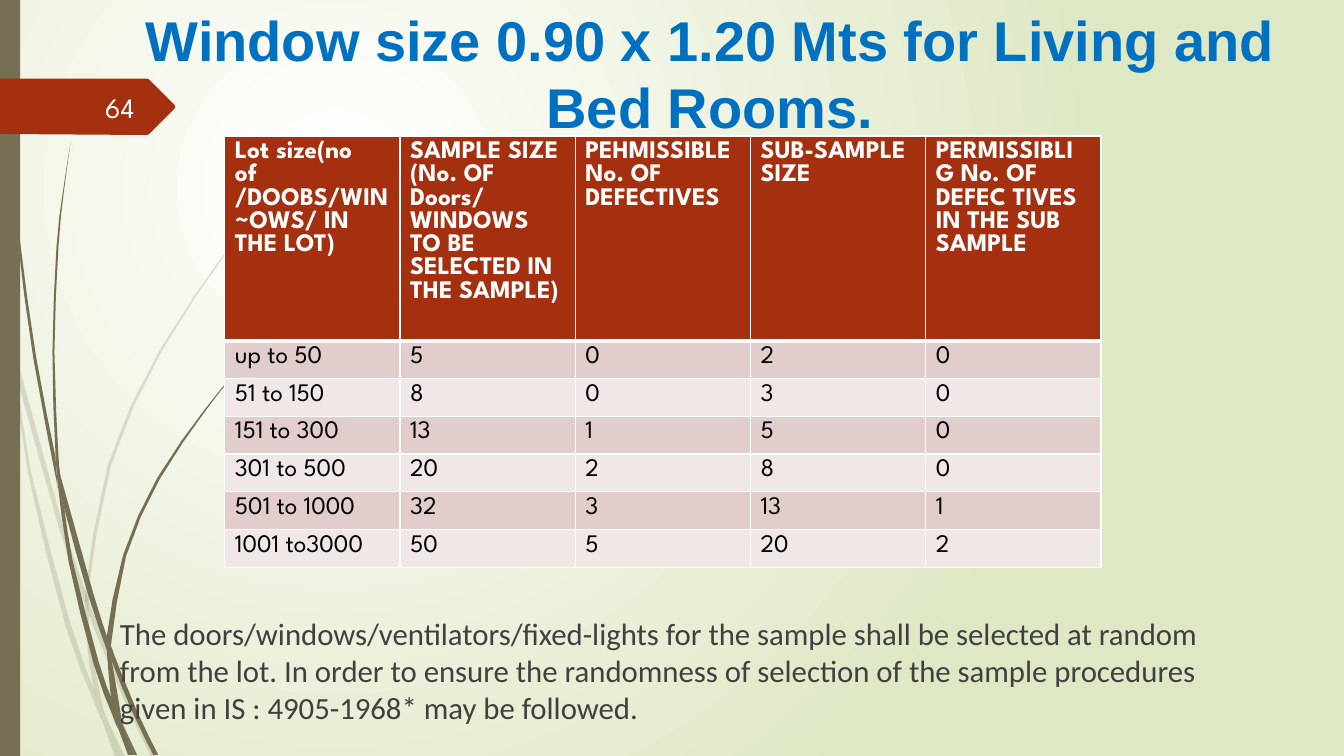
from lxml.etree import SubElement
from pptx import Presentation
from pptx.dml.color import RGBColor
from pptx.enum.shapes import MSO_SHAPE
from pptx.enum.text import MSO_ANCHOR, MSO_AUTO_SIZE, PP_ALIGN
from pptx.oxml import parse_xml
from pptx.oxml.ns import nsdecls, qn
from pptx.util import Inches, Pt

TITLE = "Window size 0.90 x 1.20 Mts for Living and Bed Rooms."
BODY = ("The doors/windows/ventilators/fixed-lights for the sample shall be selected at random "
        "from the lot. In order to ensure the randomness of selection of the sample procedures "
        "given in IS : 4905-1968* may be followed.")
PAGE = "64"
ROWS = [
    ("Lot size(no of /DOOBS/WIN~OWS/ IN THE LOT)",
     "SAMPLE SIZE (No. OF Doors/ WINDOWS TO BE SELECTED IN THE SAMPLE)",
     "PEHMISSIBLE No. OF DEFECTIVES", "SUB-SAMPLE SIZE",
     "PERMISSIBLIG No. OF DEFEC TIVES IN THE SUB SAMPLE"),
    ("up to 50", "5", "0", "2", "0"),
    ("51 to 150", "8", "0", "3", "0"),
    ("151 to 300", "13", "1", "5", "0"),
    ("301 to 500", "20", "2", "8", "0"),
    ("501 to 1000", "32", "3", "13", "1"),
    ("1001 to3000", "50", "5", "20", "2"),
]

# Each blade of grass: one edge, then the other edge running back (inches)
FAINT_BLADES = [
    ([(.11, 3.5), (.09, 3.22), (0, 2.82)], [(0, 2.99), (.1, 3.44), (.11, 3.5)]),
    ([(.84, 5.99), (.85, 5.86), (.62, 5.2), (.14, 3.45)],
     [(.17, 3.76), (.58, 5.22), (.84, 5.99)]),
    ([(.88, 5.96), (.88, 6.1), (1.23, 6.94), (1.5, 7.51)],
     [(1.55, 7.51), (1.27, 6.92), (.92, 6.07), (.88, 5.96)]),
    ([(1.19, 7.51), (1.24, 7.51)], [(1.05, 7.11), (1.19, 7.51)]),
    ([(.93, 6.83), (.7, 6.19), (.31, 4.69), (.17, 3.76), (.11, 3.5)],
     [(.11, 3.5), (.28, 4.7), (.65, 6.21), (.92, 6.93), (1.01, 7.14), (.99, 7.07), (.93, 6.83)]),
    ([(.84, 5.99), (.87, 6.46), (.93, 6.83), (.96, 6.92), (1.05, 7.11)],
     [(1.03, 7.06), (.91, 6.46), (.88, 6.1), (.84, 5.99)]),
    ([(.88, 5.84), (1.1, 4.62), (1.6, 3.49), (2.29, 2.45), (2.68, 1.98), (3.12, 1.54)],
     [(3.12, 1.53), (2.68, 1.97), (2.28, 2.44), (1.58, 3.48), (1.07, 4.61), (.85, 5.84),
      (.88, 5.96)]),
    ([(1.01, 7.14), (1.14, 7.51)], [(1.19, 7.51), (1.01, 7.14)]),
    ([(.88, 6.08), (.88, 5.96)], [(.85, 5.86), (.84, 5.99)]),
    ([(.96, 6.92), (.93, 6.83), (.99, 7.07), (1.01, 7.14), (1.19, 7.51)],
     [(1.19, 7.51), (1.05, 7.11), (.96, 6.92)]),
]
DARK_BLADES = [
    ([(.03, 0), (.04, .48), (.07, 1.1), (.17, 2.33), (.33, 3.55), (.56, 4.77), (.57, 4.81)],
     [(.55, 4.53), (.36, 3.55), (.19, 2.32), (.08, 1.09), (.05, .48), (.04, 0)]),
    ([(.6, 4.72), (.64, 5.05), (.88, 5.92), (1.06, 6.45)],
     [(1.06, 6.31), (.93, 5.9), (.6, 4.72)]),
    ([(1.13, 6.49), (1.1, 6.41), (1.11, 6.56), (1.32, 7.08), (1.52, 7.49)],
     [(1.57, 7.49), (1.36, 7.06), (1.13, 6.49)]),
    ([(1.1, 6.91), (.98, 6.57), (.72, 5.56), (.64, 5.05), (.57, 4.77)],
     [(.57, 4.77), (.68, 5.57), (.93, 6.59), (1.11, 7.08), (1.17, 7.22), (1.1, 6.91)]),
    ([(.6, 4.72), (.58, 4.53), (.54, 3.49), (.58, 2.45), (.63, 1.93), (.7, 1.41)],
     [(.7, 1.41), (.62, 1.93), (.56, 2.45), (.52, 3.49), (.55, 4.49), (.6, 4.72)]),
    ([(1.33, 7.49), (1.36, 7.49)], [(1.22, 7.19), (1.33, 7.49)]),
    ([(.57, 4.77), (.64, 5.05)], [(.6, 4.72), (.55, 4.49), (.57, 4.77)]),
    ([(1.11, 6.33), (1.25, 5.52), (1.58, 4.76), (2.05, 4.06), (2.31, 3.74), (2.61, 3.44)],
     [(2.6, 3.44), (2.31, 3.73), (2.04, 4.05), (1.56, 4.74), (1.22, 5.51), (1.06, 6.31),
      (1.1, 6.41)]),
    ([(1.17, 7.22), (1.27, 7.49)], [(1.31, 7.49), (1.17, 7.22)]),
    ([(1.06, 6.45), (1.1, 6.91), (1.16, 7.06), (1.22, 7.19)],
     [(1.21, 7.16), (1.11, 6.56), (1.06, 6.45)]),
    ([(1.06, 6.45), (1.11, 6.56)], [(1.1, 6.41), (1.06, 6.31)]),
    ([(1.16, 7.06), (1.1, 6.91), (1.17, 7.22), (1.3, 7.49)],
     [(1.33, 7.49), (1.22, 7.19), (1.16, 7.06)]),
]
BANNER = [(0, .78), (1.46, .78), (1.48, .79), (1.73, 1.04), (1.74, 1.06), (1.73, 1.08),
          (1.48, 1.33), (1.46, 1.34), (0, 1.33)]

OLIVE = RGBColor(0x76, 0x6F, 0x54)
RUST = RGBColor(0xA5, 0x30, 0x10)
BLUE = RGBColor(0x00, 0x70, 0xC0)
GREY = RGBColor(0x40, 0x40, 0x40)
BLACK = RGBColor(0x00, 0x00, 0x00)
WHITE = RGBColor(0xFF, 0xFF, 0xFF)
PAGE_WHITE = RGBColor(0xFE, 0xFF, 0xFF)
BANDS = [RGBColor(0xF0, 0xE8, 0xE7), RGBColor(0xE1, 0xCD, 0xCC)]
SPARTAN = "League Spartan"
TABLE_W, TABLE_H, HEAD_H = 8.69, 4.28, 2.03


def write(tf, text, font, size, color, bold=False, align=PP_ALIGN.LEFT):
    p = tf.paragraphs[0]
    p.alignment = align
    r = p.add_run()
    r.text = text
    r.font.name, r.font.size, r.font.bold = font, Pt(size), bold
    r.font.color.rgb = color
    return p


def place(sp, x, y, w, h):
    sp.left, sp.top, sp.width, sp.height = (Inches(v) for v in (x, y, w, h))


def paint(sp, color, alpha=None):
    sp.shadow.inherit = False
    sp.fill.solid()
    sp.fill.fore_color.rgb = color
    sp.line.fill.background()
    if alpha:
        srgb = sp.element.spPr.find(qn("a:solidFill")).find(qn("a:srgbClr"))
        SubElement(srgb, qn("a:alpha")).set("val", str(alpha * 1000))


def smooth(knots):
    """Knots with the midpoint of a Catmull-Rom curve added in each gap."""
    if len(knots) == 2:
        return knots
    ends = [knots[0], *knots, knots[-1]]
    curve = [knots[0]]
    for quad in zip(ends, ends[1:], ends[2:], ends[3:]):
        curve.append(tuple((9 * (b + c) - a - d) / 16 for a, b, c, d in zip(*quad)))
        curve.append(quad[2])
    return curve


def outline(s, points, color, alpha=None):
    pts = [(Inches(x), Inches(y)) for x, y in points]
    builder = s.shapes.build_freeform(*pts[0])
    builder.add_line_segments(pts[1:], close=True)
    paint(builder.convert_to_shape(), color, alpha)


def set_borders(cell, top, bottom):
    tcPr = cell._tc.get_or_add_tcPr()
    for i, (side, width) in enumerate((("L", 1), ("R", 1), ("T", top), ("B", bottom))):
        tcPr.insert(i, parse_xml(
            f'<a:ln{side} {nsdecls("a")} w="{Pt(width)}"><a:solidFill>'
            f'<a:srgbClr val="{WHITE}"/></a:solidFill></a:ln{side}>'))


def set_background(s):
    s.background.fill.gradient()
    grad = s.element.find(".//" + qn("a:gradFill"))
    grad.getparent().replace(grad, parse_xml(
        f'<a:gradFill {nsdecls("a")} rotWithShape="1"><a:gsLst>'
        '<a:gs pos="0"><a:srgbClr val="FFFFFF"/></a:gs>'
        '<a:gs pos="100000"><a:srgbClr val="DFE8C4"/></a:gs></a:gsLst>'
        '<a:path path="circle"><a:fillToRect l="50000" t="50000" r="100000" b="100000"/>'
        '</a:path></a:gradFill>'))


def add_lot_table(s):
    n_rows, n_cols = len(ROWS), len(ROWS[0])
    table = s.shapes.add_table(n_rows, n_cols, Inches(2.23), Inches(1.35),
                               Inches(TABLE_W), Inches(TABLE_H)).table
    for col in table.columns:
        col.width = Inches(TABLE_W / n_cols)
    for i, texts in enumerate(ROWS):
        head = i == 0
        table.rows[i].height = Inches(HEAD_H if head else (TABLE_H - HEAD_H) / (n_rows - 1))
        for j, text in enumerate(texts):
            cell = table.cell(i, j)
            cell.fill.solid()
            cell.fill.fore_color.rgb = RUST if head else BANDS[i % 2]
            set_borders(cell, top=3 if i == 1 else 1, bottom=3 if head else 1)
            write(cell.text_frame, text, SPARTAN, 18, WHITE if head else BLACK, bold=head)


def main():
    prs = Presentation()
    prs.slide_width, prs.slide_height = Inches(13.33), Inches(7.5)
    s = prs.slides.add_slide(prs.slide_layouts[1])
    set_background(s)

    for blades, alpha in ((FAINT_BLADES, 20), (DARK_BLADES, None)):
        for edge, back in blades:
            outline(s, smooth(edge) + smooth(back), OLIVE, alpha)
    bar = s.shapes.add_shape(MSO_SHAPE.RECTANGLE, 0, 0, Inches(0.2), prs.slide_height)
    paint(bar, OLIVE)
    outline(s, BANNER, RUST)

    title, body = s.shapes.title, s.placeholders[1]
    place(title, 1.29, 0, 11.5, 1.44)
    place(body, 1.09, 6.05, 11.43, 1.87)
    for sp, anchor in ((title, MSO_ANCHOR.MIDDLE), (body, MSO_ANCHOR.TOP)):
        s.shapes.element.append(sp.element)
        sp.text_frame.auto_size = MSO_AUTO_SIZE.NONE
        sp.text_frame.vertical_anchor = anchor
    write(title.text_frame, TITLE, "Arial", 40, BLUE, bold=True, align=PP_ALIGN.CENTER)
    p = write(body.text_frame, BODY, "Calibri", 22, GREY)
    p.space_before = Pt(10)
    pPr = p._p.get_or_add_pPr()
    pPr.set("marL", "0")
    pPr.set("indent", "0")
    SubElement(pPr, qn("a:buNone"))

    add_lot_table(s)

    tf = s.shapes.add_textbox(Inches(0.58), Inches(0.86), Inches(0.85), Inches(0.4)).text_frame
    tf.word_wrap = True
    tf.vertical_anchor = MSO_ANCHOR.MIDDLE
    write(tf, PAGE, SPARTAN, 20, PAGE_WHITE, align=PP_ALIGN.RIGHT)
    prs.save("out.pptx")


if __name__ == "__main__":
    main()
